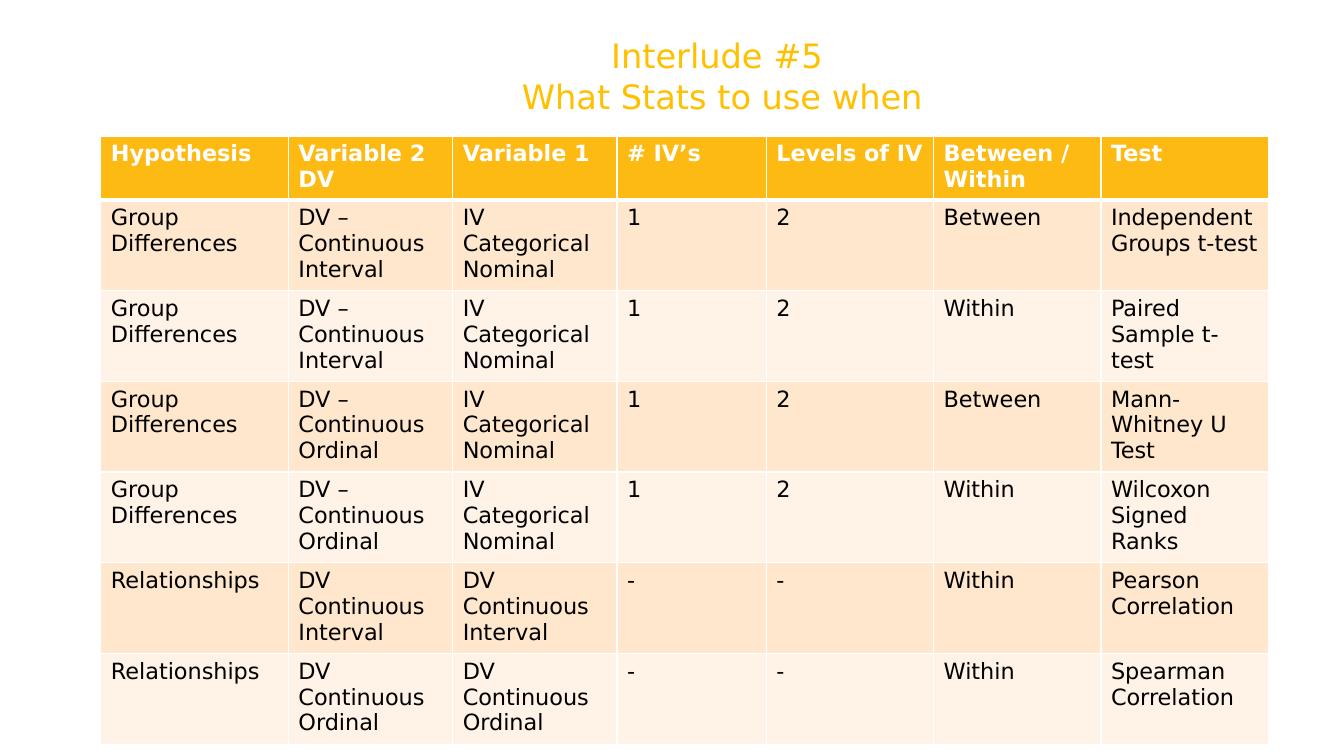
import pptx
import pptx.util
import pptx.dml.color
import pptx.enum.text
import pptx.oxml
import pptx.oxml.ns

Inches, Pt = pptx.util.Inches, pptx.util.Pt
Color = pptx.dml.color.RGBColor

GOLD = Color(0xFF, 0xC0, 0x00)
AMBER = Color(0xFD, 0xBA, 0x12)
PEACH = Color(0xFE, 0xE7, 0xCC)
CREAM = Color(0xFF, 0xF3, 0xE7)
WHITE = Color(0xFF, 0xFF, 0xFF)
BLACK = Color(0x00, 0x00, 0x00)

FACE = "DejaVu Sans"
TITLE = {"name": FACE, "size": Pt(24), "color": GOLD}
HEAD = {"name": FACE, "size": Pt(16), "color": WHITE, "bold": True}
BODY = {"name": FACE, "size": Pt(16), "color": BLACK, "bold": False}

WIDTHS = [1.86, 1.63, 1.63, 1.48, 1.66, 1.66, 1.66]
HEAD_TALL, BODY_TALL = 0.63, 0.9

GROUP = "Group Differences"
LINK = "Relationships"
NOMINAL = "IV\nCategorical Nominal"
SPAN = "DV –\nContinuous Interval"
RANK = "DV –\nContinuous Ordinal"
SPAN_LINK = "DV\nContinuous\nInterval"
RANK_LINK = "DV\nContinuous\nOrdinal"
ROWS = [
    ["Hypothesis", "Variable 2\nDV", "Variable 1", "# IV’s",
     "Levels of IV", "Between / Within", "Test"],
    [GROUP, SPAN, NOMINAL, "1", "2", "Between", "Independent Groups t-test"],
    [GROUP, SPAN, NOMINAL, "1", "2", "Within", "Paired Sample t-test"],
    [GROUP, RANK, NOMINAL, "1", "2", "Between", "Mann-Whitney U Test"],
    [GROUP, RANK, NOMINAL, "1", "2", "Within", "Wilcoxon Signed Ranks"],
    [LINK, SPAN_LINK, SPAN_LINK, "-", "-", "Within", "Pearson Correlation"],
    [LINK, RANK_LINK, RANK_LINK, "-", "-", "Within", "Spearman Correlation"],
]


def write(frame, text, style, align=None):
    frame.text = text
    for para in frame.paragraphs:
        para.alignment = align
        for run in para.runs:
            for key, value in style.items():
                if key == "color":
                    run.font.color.rgb = value
                else:
                    setattr(run.font, key, value)


def edge(cell, side, points):
    """Add a white border; call before the cell is filled."""
    line = pptx.oxml.parse_xml(
        f'<a:ln{side} {pptx.oxml.ns.nsdecls("a")} w="{Pt(points)}">'
        f'<a:solidFill><a:srgbClr val="{WHITE}"/></a:solidFill></a:ln{side}>')
    cell._tc.get_or_add_tcPr().append(line)


def add_title(slide, left, top, width, height):
    title = slide.shapes.title
    title.left, title.top = Inches(left), Inches(top)
    title.width, title.height = Inches(width), Inches(height)
    frame = title.text_frame
    frame.word_wrap = True
    frame.auto_size = pptx.enum.text.MSO_AUTO_SIZE.SHAPE_TO_FIT_TEXT
    frame.vertical_anchor = pptx.enum.text.MSO_ANCHOR.TOP
    write(frame, "Interlude #5 \nWhat Stats to use when", TITLE,
          pptx.enum.text.PP_ALIGN.CENTER)


def add_grid(slide, left, top):
    talls = [HEAD_TALL] + [BODY_TALL] * (len(ROWS) - 1)
    table = slide.shapes.add_table(
        len(ROWS), len(WIDTHS), Inches(left), Inches(top),
        Inches(sum(WIDTHS)), Inches(sum(talls))).table
    for col, width in zip(table.columns, WIDTHS):
        col.width = Inches(width)
    for r, (texts, tall) in enumerate(zip(ROWS, talls)):
        table.rows[r].height = Inches(tall)
        fill = AMBER if r == 0 else PEACH if r % 2 else CREAM
        for c, text in enumerate(texts):
            cell = table.cell(r, c)
            write(cell.text_frame, text, BODY if r else HEAD)
            for side in "LRTB":
                thick = (r, side) in [(0, "B"), (1, "T")]
                edge(cell, side, 3 if thick else 1)
            cell.fill.solid()
            cell.fill.fore_color.rgb = fill


def main():
    deck = pptx.Presentation()
    deck.slide_width, deck.slide_height = Inches(13.33), Inches(7.5)
    slide = deck.slides.add_slide(deck.slide_layouts[5])
    add_title(slide, 3.83, 0.3, 6.67, 0.91)
    add_grid(slide, 1, 1.35)
    deck.save("out.pptx")


if __name__ == "__main__":
    main()
